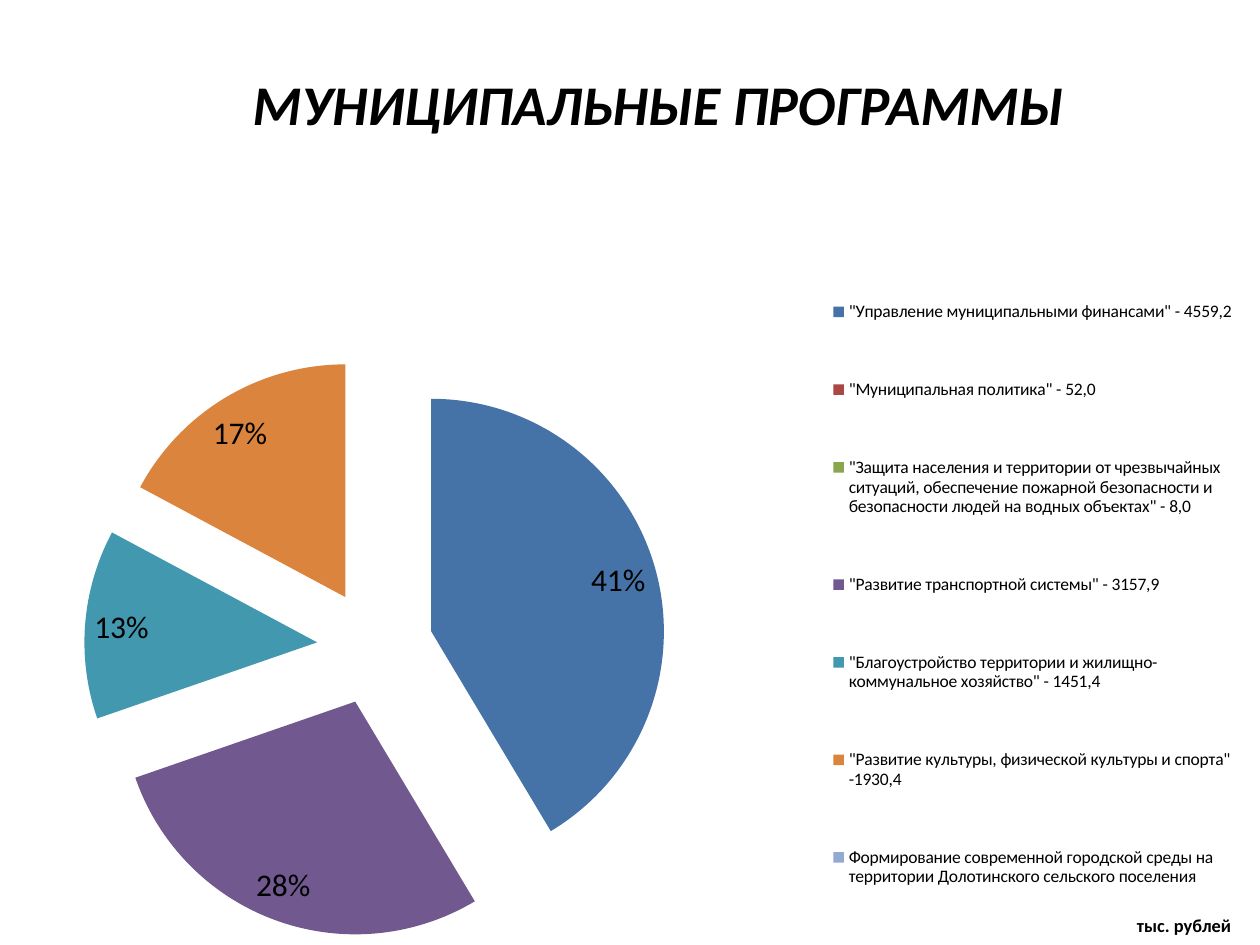
"""Build a slide with an exploded pie chart of municipal programmes."""
from dataclasses import dataclass
from typing import Any, Optional

import pptx
import pptx.chart.data
import pptx.dml.color
import pptx.enum.chart
import pptx.enum.text
import pptx.oxml
import pptx.oxml.ns
import pptx.util

EMU_PER_PX = 914400 / 126
FONT = "Calibri"
BEST_FIT = pptx.enum.chart.XL_LABEL_POSITION.BEST_FIT
COLORS = {
    "text": "000000",
    "finance": "4572A7",
    "policy": "AA4643",
    "safety": "89A54E",
    "transport": "71588F",
    "utilities": "4198AF",
    "culture": "DB843D",
    "environment": "93A9CF",
}


@dataclass(frozen=True)
class Box:
    """A rectangle in px."""
    left: int
    top: int
    width: int
    height: int

    def emu(self) -> list[int]:
        """Return the four lengths in EMU."""
        return [px(n) for n in (self.left, self.top, self.width, self.height)]


@dataclass(frozen=True)
class Programme:
    """One slice of the pie."""
    name: str
    percent: Optional[int]
    color: str
    label_shift: Optional[dict[str, float]] = None


TITLE_BOX = Box(84, 55, 1149, 145)
CHART_BOX = Box(-4, 244, 1264, 701)
PLOT_LAYOUT = {
    "layoutTarget": "inner", "xMode": "edge", "yMode": "edge",
    "x": 0, "y": 0.16, "w": 0.6, "h": 0.83,
}
LEGEND_LAYOUT = {"xMode": "edge", "yMode": "edge", "x": 0.65, "y": 0, "w": 0.34, "h": 1}
UNIT_LAYOUT = {"xMode": "edge", "yMode": "edge", "x": 0.9, "y": 0.95}

PROGRAMMES = [
    Programme('"Управление муниципальными финансами" - 4559,2', 41, "finance"),
    Programme('"Муниципальная политика" - 52,0', 0, "policy", {"x": 0.04, "y": -0.07}),
    Programme(
        '"Защита населения и территории от чрезвычайных ситуаций, обеспечение '
        'пожарной безопасности и безопасности людей на водных объектах" - 8,0',
        0, "safety"),
    Programme('"Развитие транспортной системы" - 3157,9', 28, "transport"),
    Programme(
        '"Благоустройство территории и жилищно-коммунальное хозяйство" - 1451,4',
        13, "utilities"),
    Programme(
        '"Развитие культуры, физической культуры и спорта" -1930,4', 17, "culture"),
    Programme(
        "Формирование современной городской среды на территории Долотинского "
        "сельского поселения", None, "environment"),
]


def px(length: int) -> int:
    """Turn px into EMU."""
    return round(length * EMU_PER_PX)


def rgb(name: str) -> pptx.dml.color.RGBColor:
    """Look up a colour by name."""
    return pptx.dml.color.RGBColor.from_string(COLORS[name])


def set_attributes(target: Any, values: dict[str, Any]) -> None:
    """Set each named attribute on the target."""
    for name, value in values.items():
        setattr(target, name, value)


def style_font(font: Any, size: float, **values: Any) -> None:
    """Give a font the slide's typeface, colour and a size."""
    set_attributes(font, {"name": FONT, "size": pptx.util.Pt(size), **values})
    font.color.rgb = rgb("text")


def new_element(tag: str, value: Any = None) -> Any:
    """Create a chart element with an optional val."""
    element = pptx.oxml.parse_xml(f"<{tag} {pptx.oxml.ns.nsdecls('c')}/>")
    if value is not None:
        element.set("val", str(value))
    return element


def set_layout(parent: Any, index: int, values: dict[str, Any]) -> None:
    """Give a chart part a manual layout."""
    for old in parent.xpath("c:layout"):
        parent.remove(old)
    layout = new_element("c:layout")
    manual = new_element("c:manualLayout")
    for name, value in values.items():
        manual.append(new_element(f"c:{name}", value))
    layout.append(manual)
    parent.insert(index, layout)


def add_title(slide: Any, text: str) -> None:
    """Add the slide heading."""
    frame = slide.shapes.add_textbox(*TITLE_BOX.emu()).text_frame
    set_attributes(frame, {
        "word_wrap": True,
        "vertical_anchor": pptx.enum.text.MSO_ANCHOR.MIDDLE,
        "margin_bottom": px(56),
    })
    paragraph = frame.paragraphs[0]
    paragraph.alignment = pptx.enum.text.PP_ALIGN.CENTER
    run = paragraph.add_run()
    run.text = text
    style_font(run.font, 32, bold=True, italic=True)


def shift_label(chart: Any, series: Any, index: int, shift: dict[str, float]) -> None:
    """Move one percentage label away from its slice."""
    label = series.points[index].data_label
    label.position = BEST_FIT
    style_font(label.font, 18)
    element = chart.element.xpath(f".//c:dLbl[c:idx/@val='{index}']")[0]
    for tag, value in {"showVal": "0", "showPercent": "1"}.items():
        element.xpath(f"c:{tag}")[0].set("val", value)
    set_layout(element, 1, shift)


def style_slices(chart: Any) -> None:
    """Colour the slices, pull them apart and label them with percentages."""
    series = chart.plots[0].series[0]
    style_font(series.data_labels.font, 18)
    set_attributes(series.data_labels, {
        "show_percentage": True,
        "show_value": False,
        "position": BEST_FIT,
    })
    for index, programme in enumerate(PROGRAMMES):
        point = series.points[index]
        point.format.fill.solid()
        point.format.fill.fore_color.rgb = rgb(programme.color)
        point.format.line.fill.background()
        if programme.label_shift:
            shift_label(chart, series, index, programme.label_shift)
    first_point = chart.element.xpath(".//c:ser/c:dPt")[0]
    first_point.addprevious(new_element("c:explosion", 25))


def add_pie(slide: Any) -> None:
    """Add the pie chart with its legend and unit caption."""
    data = pptx.chart.data.CategoryChartData()
    data.categories = [programme.name for programme in PROGRAMMES]
    data.add_series("Series 1", [programme.percent for programme in PROGRAMMES])
    chart = slide.shapes.add_chart(
        pptx.enum.chart.XL_CHART_TYPE.PIE, *CHART_BOX.emu(), data).chart
    style_font(chart.font, 18)
    chart.plots[0].vary_by_categories = True
    chart.has_legend = True
    set_attributes(chart.legend, {
        "position": pptx.enum.chart.XL_LEGEND_POSITION.RIGHT,
        "include_in_layout": False,
    })
    style_font(chart.legend.font, 10)
    chart.has_title = True
    run = chart.chart_title.text_frame.paragraphs[0].add_run()
    run.text = "тыс. рублей"
    style_font(run.font, 10.5, bold=True)
    style_slices(chart)

    root = chart.element
    set_layout(root.xpath("c:chart/c:plotArea")[0], 0, PLOT_LAYOUT)
    set_layout(root.xpath("c:chart/c:legend")[0], 1, LEGEND_LAYOUT)
    set_layout(root.xpath("c:chart/c:title")[0], 1, UNIT_LAYOUT)


def main() -> None:
    """Build and save the presentation."""
    presentation = pptx.Presentation()
    set_attributes(presentation, {"slide_width": px(1260), "slide_height": px(945)})
    slide = presentation.slides.add_slide(presentation.slide_layouts[6])
    add_title(slide, "МУНИЦИПАЛЬНЫЕ ПРОГРАММЫ")
    add_pie(slide)
    presentation.save("out.pptx")


if __name__ == "__main__":
    main()
